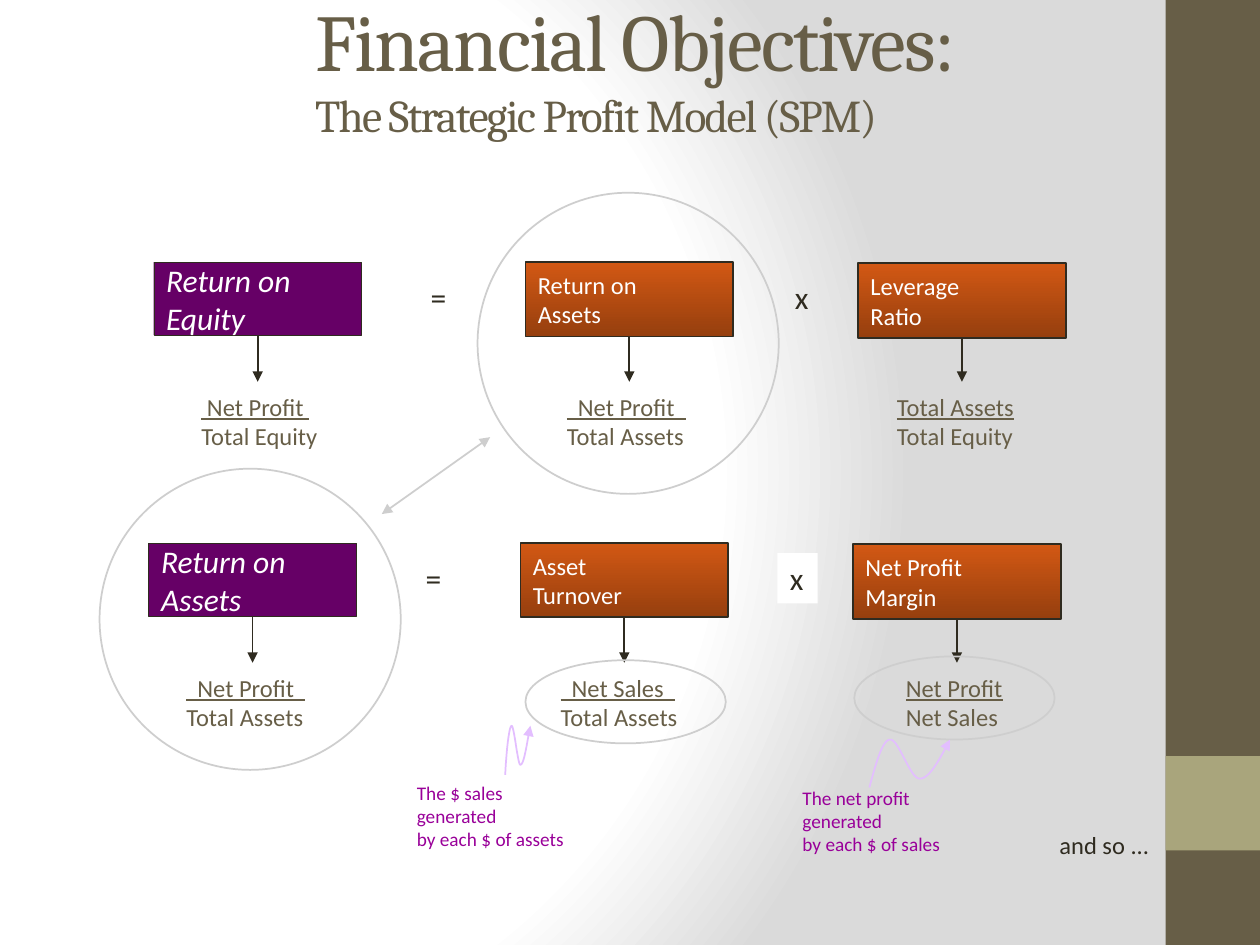
from pptx import Presentation
from pptx.dml.color import RGBColor
from pptx.enum.shapes import MSO_CONNECTOR, MSO_SHAPE
from pptx.enum.text import MSO_ANCHOR, MSO_AUTO_SIZE, PP_ALIGN
from pptx.oxml import parse_xml
from pptx.oxml.ns import nsdecls, qn
from pptx.util import Inches, Pt

OLIVE = RGBColor(0x67, 0x5E, 0x47)
SAGE = RGBColor(0xA9, 0xA5, 0x7C)
INK = RGBColor(0x2F, 0x2B, 0x20)
WHITE = RGBColor(0xFF, 0xFF, 0xFF)
SILVER = RGBColor(0xCE, 0xCE, 0xCE)
MIST = RGBColor(0xDA, 0xDA, 0xDA)
PURPLE = RGBColor(0x66, 0x00, 0x66)
MAGENTA = RGBColor(0x99, 0x00, 0x99)
LILAC = RGBColor(0xE3, 0xBE, 0xFF)
ORANGE = RGBColor(0xD2, 0x58, 0x14)
RUST = RGBColor(0x96, 0x3F, 0x0E)

COLUMNS, ROWS = 100, 75
BOX_WIDTH = 16.5
TEXT_FORMATS = {
    "heading": (OLIVE, {"name": "Cambria", "size": Pt(46)}),
    "subheading": (OLIVE, {"name": "Cambria", "size": Pt(26)}),
    "result": (WHITE, {"name": "Calibri", "size": Pt(18), "italic": True}),
    "factor": (WHITE, {"name": "Calibri", "size": Pt(14)}),
    "operator": (INK, {"name": "Calibri", "size": Pt(18)}),
    "numerator": (OLIVE, {"name": "Calibri", "size": Pt(14), "underline": True}),
    "denominator": (OLIVE, {"name": "Calibri", "size": Pt(14)}),
    "comment": (MAGENTA, {"name": "Calibri", "size": Pt(11)}),
    "closing": (INK, {"name": "Calibri", "size": Pt(14)}),
}


def apply_format(font, format_name):
    color, values = TEXT_FORMATS[format_name]
    for attribute, value in values.items():
        setattr(font, attribute, value)
    font.color.rgb = color


def bezier(start, control1, control2, end, steps=16):
    """Points along a cubic curve, without its start."""
    points = []
    for step in range(1, steps + 1):
        t = step / steps
        weights = ((1 - t) ** 3, 3 * t * (1 - t) ** 2, 3 * t * t * (1 - t), t ** 3)
        points.append(tuple(
            sum(w * value for w, value in zip(weights, axis))
            for axis in zip(start, control1, control2, end)))
    return points


class ProfitModelSlide:
    """Draws on one slide; lengths are columns and rows of a 100 by 75 grid."""

    def __init__(self, presentation):
        self.column = presentation.slide_width / COLUMNS
        self.row = presentation.slide_height / ROWS
        self.slide = presentation.slides.add_slide(presentation.slide_layouts[5])
        self.shapes = self.slide.shapes

    def point(self, x, y):
        return round(x * self.column), round(y * self.row)

    def area(self, x, y, width, height):
        return self.point(x, y) + self.point(width, height)

    def background(self):
        stops = "".join(
            f'<a:gs pos="{position}"><a:srgbClr val="{color}"/></a:gs>'
            for position, color in ((0, WHITE), (75000, WHITE), (100000, MIST)))
        self.slide.element.cSld.insert(0, parse_xml(
            f'<p:bg {nsdecls("p", "a")}><p:bgPr><a:gradFill rotWithShape="1">'
            f'<a:gsLst>{stops}</a:gsLst><a:path path="circle">'
            '<a:fillToRect l="20000" t="50000" r="100000" b="50000"/></a:path>'
            '</a:gradFill><a:effectLst/></p:bgPr></p:bg>'))

    def title(self, heading, subheading):
        title = self.shapes.title
        title.left, title.top, title.width, title.height = self.area(24, -1.3, 73.6, 13.1)
        frame = title.text_frame
        frame.auto_size = MSO_AUTO_SIZE.NONE
        frame.vertical_anchor = MSO_ANCHOR.MIDDLE
        paragraph = frame.paragraphs[0]
        paragraph.alignment = PP_ALIGN.LEFT
        for text, format_name in ((heading, "heading"), (subheading, "subheading")):
            if paragraph.runs:
                paragraph.add_line_break()
            run = paragraph.add_run()
            run.text = text
            apply_format(run.font, format_name)
            run.font._element.set("spc", "-100")

    def panel(self, kind, place, fill=None, line=None, weight=1):
        panel = self.shapes.add_shape(kind, *self.area(*place))
        panel.shadow.inherit = False
        if fill is None:
            panel.fill.background()
        else:
            panel.fill.solid()
            panel.fill.fore_color.rgb = fill
        self.outline(panel.line, line, weight)
        return panel

    def outline(self, line, color, weight=1):
        if color is None:
            line.fill.background()
        else:
            line.color.rgb = color
            line.width = Pt(weight)

    def set_lines(self, frame, lines, anchor=MSO_ANCHOR.TOP, wrap=False):
        """Fill a frame with (text, format name) paragraphs."""
        frame.word_wrap = wrap
        frame.vertical_anchor = anchor
        for index, (text, format_name) in enumerate(lines):
            paragraph = frame.add_paragraph() if index else frame.paragraphs[0]
            paragraph.alignment = PP_ALIGN.LEFT
            paragraph.text = text
            for run in paragraph.runs:
                apply_format(run.font, format_name)

    def label(self, place, lines, fill=None, anchor=MSO_ANCHOR.TOP):
        label = self.shapes.add_textbox(*self.area(*place))
        if fill is not None:
            label.fill.solid()
            label.fill.fore_color.rgb = fill
        self.set_lines(label.text_frame, lines, anchor)

    def measure(self, x, y, name, is_result):
        """Box naming one measure of the model."""
        if is_result:
            box = self.panel(MSO_SHAPE.RECTANGLE, (x, y, BOX_WIDTH, 5.8), PURPLE, INK, 0.25)
        else:
            box = self.panel(MSO_SHAPE.RECTANGLE, (x, y, BOX_WIDTH, 5.9), line=INK)
            box.fill.gradient()
            box.fill.gradient_angle = 270
            for stop, color in zip(box.fill.gradient_stops, (ORANGE, RUST)):
                stop.color.rgb = color
        format_name = "result" if is_result else "factor"
        self.set_lines(box.text_frame, [(word, format_name) for word in name],
                       MSO_ANCHOR.MIDDLE, wrap=True)
        return box

    def arrowheads(self, item, ends):
        line = item._element.spPr.find(qn("a:ln"))
        for end in ends:
            line.append(parse_xml(f'<a:{end} {nsdecls("a")} type="triangle"/>'))

    def arrow(self, start, end, color, ends=("tailEnd",), source=None):
        arrow = self.shapes.add_connector(
            MSO_CONNECTOR.STRAIGHT, *self.point(*start), *self.point(*end))
        if source is not None:
            arrow.begin_connect(source, 2)
        self.outline(arrow.line, color)
        self.arrowheads(arrow, ends)
        arrow._element.spPr.append(parse_xml(f'<a:effectLst {nsdecls("a")}/>'))

    def squiggle(self, start, *curves):
        points = [start]
        for curve in curves:
            points += bezier(points[-1], *curve)
        builder = self.shapes.build_freeform(*self.point(*start))
        builder.add_line_segments([self.point(*p) for p in points[1:]], close=False)
        squiggle = builder.convert_to_shape()
        squiggle.shadow.inherit = False
        squiggle.fill.background()
        self.outline(squiggle.line, LILAC)
        self.arrowheads(squiggle, ["tailEnd"])

    def equation(self, dx, dy, terms, operator_fills):
        """One row: result = factor x factor, each with its fraction below."""
        for index, (x, y, (name, fraction_x, numerator, denominator)) in enumerate(
                zip((12.2, 41.7, 68.1), (20.8, 20.8, 20.9), terms)):
            box = self.measure(x + dx, y + dy, name, is_result=index == 0)
            middle = x + dx + BOX_WIDTH / 2
            self.arrow((middle, 26.9 + dy), (middle, 30.3 + dy), INK, source=box)
            self.label((fraction_x, 30.6 + dy, 11.5, 5.7),
                       [(numerator, "numerator"), (denominator, "denominator")])
        for sign, x, fill in zip("=x", (33.2, 62.1), operator_fills):
            self.label((x + dx, 21.6 + dy, 3.2, 4), [(sign, "operator")], fill)


def main():
    presentation = Presentation()
    presentation.slide_width, presentation.slide_height = Inches(10), Inches(7.5)
    model = ProfitModelSlide(presentation)
    model.background()
    model.panel(MSO_SHAPE.RECTANGLE, (92.5, 0, 7.5, 75), OLIVE)
    model.panel(MSO_SHAPE.RECTANGLE, (92.5, 60, 7.5, 7.5), SAGE)
    model.title("Financial Objectives:", "The Strategic Profit Model (SPM)")

    model.equation(0, 0, [
        (("Return on", "Equity"), 15, " Net Profit ", "Total Equity"),
        (("Return on", "Assets"), 44, "  Net Profit  ", "Total Assets"),
        (("Leverage", "Ratio"), 70.2, "Total Assets", "Total Equity"),
    ], (None, None))
    model.equation(-0.4, 22.3, [
        (("Return on", "Assets"), 13.8, "  Net Profit  ", "Total Assets"),
        (("Asset", "Turnover"), 43.5, "  Net Sales  ", "Total Assets"),
        (("Net Profit", "Margin"), 70.9, "Net Profit", "Net Sales"),
    ], (WHITE, WHITE))

    for highlight in ((7.9, 37.2, 23.9, 23.9), (37.9, 15.3, 23.9, 23.9),
                      (41.7, 52.4, 15.9, 6.6), (67.8, 52.1, 15.9, 6.6)):
        model.panel(MSO_SHAPE.OVAL, highlight, line=SILVER)
    model.arrow((30.3, 40.8), (38.9, 34.7), SILVER, ("headEnd", "tailEnd"))

    for place, comment in (
            ((32.1, 61.5, 13.7, 6.5), "The $ sales\vgenerated\vby each $ of assets"),
            ((62.7, 61.9, 13, 6.5), "The net profit\vgenerated\vby each $ of sales")):
        model.label(place, [(comment, "comment")], anchor=MSO_ANCHOR.MIDDLE)
    model.squiggle((40.1, 61.5), ((40.2, 59.6), (40.4, 57.7), (40.6, 57.6)),
                   ((40.8, 57.5), (41.1, 60.7), (41.3, 60.7)),
                   ((41.6, 60.7), (41.8, 59.1), (42.1, 57.6)))
    model.squiggle((69, 62.5), ((69.5, 60.7), (70, 58.8), (70.6, 58.7)),
                   ((71.3, 58.5), (72.2, 61.8), (73, 61.8)),
                   ((73.8, 61.8), (74.6, 60.2), (75.4, 58.7)))
    model.label((83.1, 65.4, 9.2, 3.3), [("and so ...", "closing")])
    presentation.save("out.pptx")


if __name__ == "__main__":
    main()
